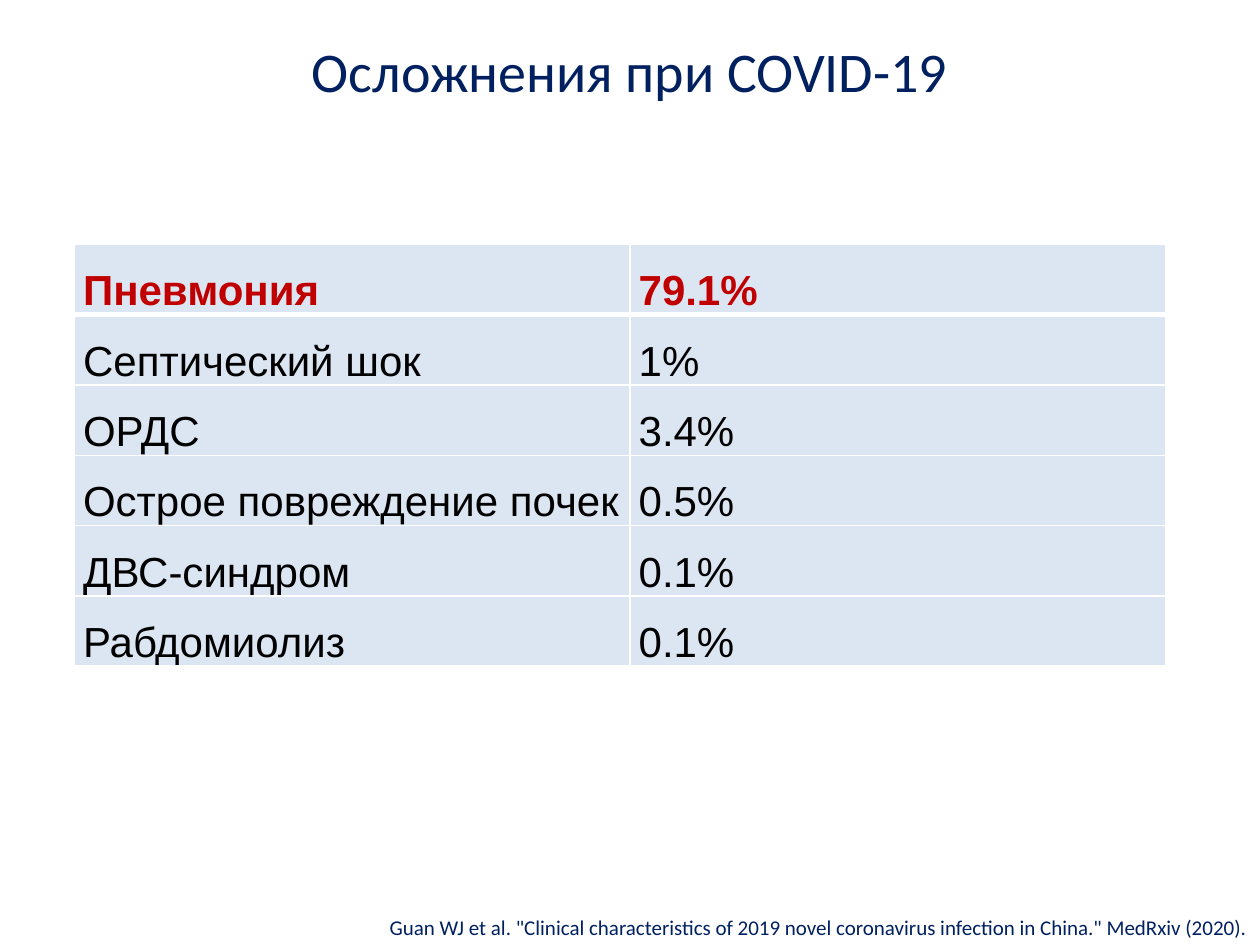
from lxml import etree
from pptx import Presentation
from pptx.dml.color import RGBColor
from pptx.enum import text
from pptx.oxml import ns
from pptx.util import Pt

COLORS = {
    "navy": "002060",
    "red": "C00000",
    "black": "000000",
    "pale": "DCE6F2",
    "white": "FFFFFF",
}
COMPLICATIONS = [
    ("Пневмония", "79.1%"),
    ("Септический шок", "1%"),
    ("ОРДС", "3.4%"),
    ("Острое повреждение почек", "0.5%"),
    ("ДВС-синдром", "0.1%"),
    ("Рабдомиолиз", "0.1%"),
]
COLUMN_WIDTHS = [317.5, 306]
ROW_HEIGHT = 40


def add_span(para, words, font, size, color, bold=False):
    span = para.add_run()
    span.text = words
    span.font.name = font
    span.font.size = Pt(size)
    span.font.bold = bold
    span.font.color.rgb = RGBColor.from_string(COLORS[color])


def add_border(cell, side, width):
    properties = cell._tc.get_or_add_tcPr()
    line = etree.SubElement(properties, ns.qn(f"a:ln{side}"), w=str(Pt(width)))
    fill = etree.SubElement(line, ns.qn("a:solidFill"))
    etree.SubElement(fill, ns.qn("a:srgbClr"), val=COLORS["white"])


def format_cell(cell, row_index, words):
    heading = row_index == 0
    cell.margin_left = cell.margin_right = Pt(5)
    cell.margin_top = cell.margin_bottom = 0
    widths = {"L": 1, "R": 1, "T": 3 if row_index == 1 else 1, "B": 3 if heading else 1}
    for side, width in widths.items():
        add_border(cell, side, width)
    cell.fill.solid()
    cell.fill.fore_color.rgb = RGBColor.from_string(COLORS["pale"])
    para = cell.text_frame.paragraphs[0]
    para.line_spacing = 1.5
    add_span(para, words, "Arial", 24, "red" if heading else "black", heading)


def add_complications(page):
    rows = len(COMPLICATIONS)
    table = page.shapes.add_table(
        rows, len(COLUMN_WIDTHS), Pt(42.5), Pt(139.7),
        Pt(sum(COLUMN_WIDTHS)), Pt(rows * ROW_HEIGHT),
    ).table
    table.first_row = False
    table.horz_banding = False
    for column, width in zip(table.columns, COLUMN_WIDTHS):
        column.width = Pt(width)
    for row_index, values in enumerate(COMPLICATIONS):
        for column_index, words in enumerate(values):
            format_cell(table.cell(row_index, column_index), row_index, words)


def set_title(page, words):
    box = page.shapes.title
    box.left, box.top, box.width, box.height = 0, Pt(17.3), Pt(720), Pt(46)
    frame = box.text_frame
    frame.vertical_anchor = text.MSO_ANCHOR.MIDDLE
    frame.auto_size = text.MSO_AUTO_SIZE.NONE
    para = frame.paragraphs[0]
    para.alignment = text.PP_ALIGN.CENTER
    add_span(para, words, "Calibri", 32, "navy")


def add_citation(page, words):
    box = page.shapes.add_textbox(Pt(161.3), Pt(519), Pt(558.7), Pt(21.8))
    box.text_frame.word_wrap = True
    para = box.text_frame.paragraphs[0]
    para.alignment = text.PP_ALIGN.RIGHT
    add_span(para, words, "Calibri", 12, "navy")


def main():
    deck = Presentation()
    deck.slide_width, deck.slide_height = Pt(720), Pt(540)
    page = deck.slides.add_slide(deck.slide_layouts.get_by_name("Title Only"))
    add_complications(page)
    set_title(page, "Осложнения при COVID-19")
    add_citation(
        page,
        'Guan WJ et al. "Clinical characteristics of 2019 novel coronavirus '
        'infection in China." MedRxiv (2020).',
    )
    deck.save("out.pptx")


if __name__ == "__main__":
    main()
